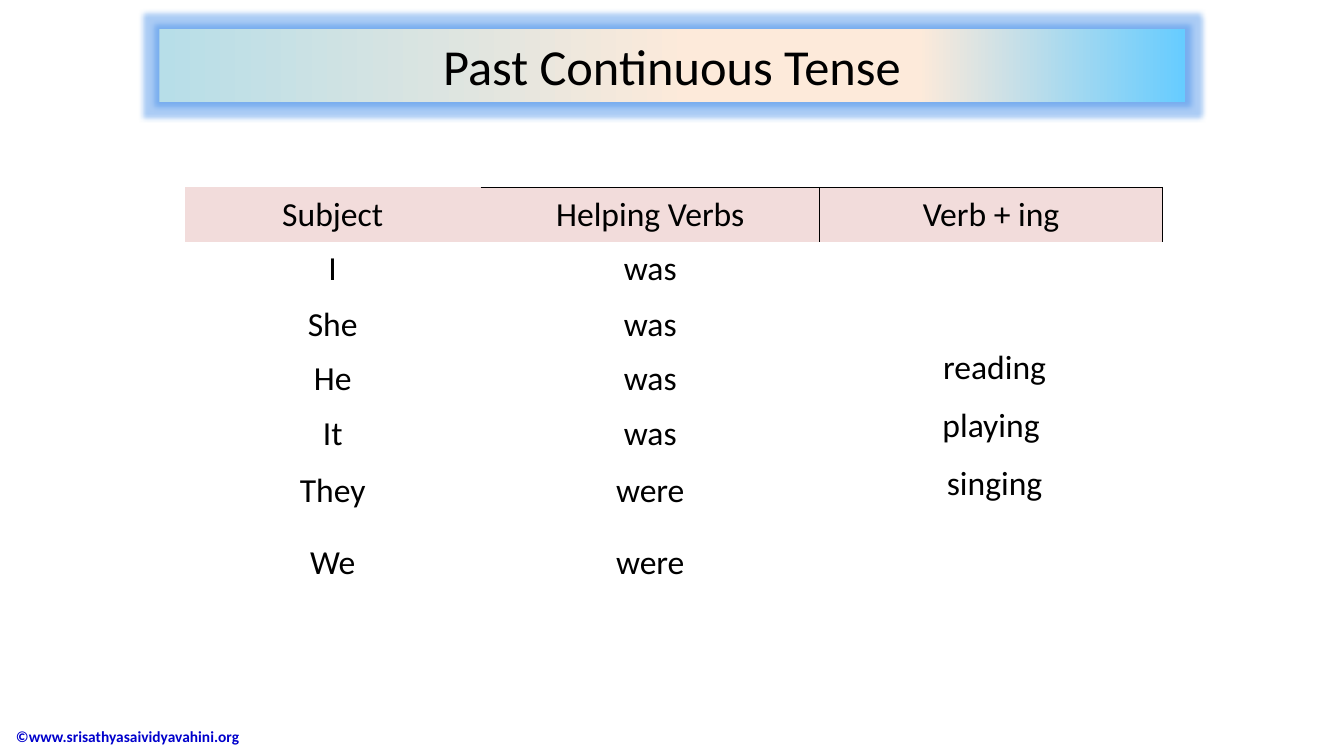
from lxml import etree
from pptx import Presentation
from pptx.dml.color import RGBColor
from pptx.enum.shapes import MSO_SHAPE
from pptx.enum.text import MSO_ANCHOR, PP_ALIGN
from pptx.oxml import parse_xml
from pptx.oxml.ns import nsdecls, qn
from pptx.util import Inches, Pt

RECTANGLE = MSO_SHAPE.RECTANGLE
MIDDLE = MSO_ANCHOR.MIDDLE
CENTER, LEFT = PP_ALIGN.CENTER, PP_ALIGN.LEFT

BLACK = RGBColor(0x00, 0x00, 0x00)
LINK_BLUE = RGBColor(0x00, 0x00, 0xCC)
HEADER_PINK = RGBColor(0xF2, 0xDC, 0xDB)
GLOW_BLUE = RGBColor(0x2E, 0x80, 0xE6)
PALE_TEAL = RGBColor(0xB7, 0xDE, 0xE8)
PEACH = RGBColor(0xFD, 0xEA, 0xDA)
SKY_BLUE = RGBColor(0x66, 0xCC, 0xFF)

NO_GRID_STYLE = "{2D5ABB26-0587-4C30-8999-92F81FD0307C}"
BANNER_STOPS = [(0, PALE_TEAL), (52, PEACH), (74, PEACH), (100, SKY_BLUE)]
COLUMN_WIDTHS = [2.94, 3.36, 3.4]
ROW_HEIGHTS = [0.54, 0.55, 0.54, 0.54, 0.57, 0.71, 0.71]
HEADERS = ["Subject", "Helping Verbs", "Verb + ing"]
HEADER_BORDERS = [[], ["lnR", "lnT"], ["lnL", "lnR", "lnT"]]
SUBJECTS = [("I", "was"), ("She", "was"), ("He", "was"), ("It", "was"),
            ("They", "were"), ("We", "were")]
# Each verb with its left indent in inches
VERBS = [("reading", 0.07), ("playing", 0), ("singing", 0.07)]


class TenseSlide:
    def __init__(self, page, font="Calibri"):
        self.page = page
        self.font = font

    def style(self, para, size, color=BLACK, bold=False, align=CENTER):
        para.alignment = align
        para.font.name = self.font
        para.font.size = Pt(size)
        para.font.bold = bold
        para.font.color.rgb = color

    def banner(self, text, left, top, width, height):
        box = self.page.shapes.add_shape(
            RECTANGLE, Inches(left), Inches(top), Inches(width), Inches(height))
        box.line.fill.background()
        box.fill.background()
        stops = "".join(
            f'<a:gs pos="{position * 1000}"><a:srgbClr val="{color}"/></a:gs>'
            for position, color in BANNER_STOPS)
        properties = box.element.spPr
        properties.replace(properties.find(qn("a:noFill")), parse_xml(
            f'<a:gradFill {nsdecls("a")} rotWithShape="1"><a:gsLst>{stops}</a:gsLst>'
            '<a:lin ang="0" scaled="0"/></a:gradFill>'))
        properties.append(parse_xml(
            f'<a:effectLst {nsdecls("a")}><a:glow rad="{Pt(8)}"><a:srgbClr val="{GLOW_BLUE}">'
            '<a:alpha val="40000"/></a:srgbClr></a:glow></a:effectLst>'))
        box.text_frame.vertical_anchor = MIDDLE
        para = box.text_frame.paragraphs[0]
        para.text = text
        self.style(para, 36)

    def footer(self, text, left, top, width, height):
        box = self.page.shapes.add_textbox(
            Inches(left), Inches(top), Inches(width), Inches(height))
        box.text_frame.word_wrap = True
        box.text_frame.vertical_anchor = MIDDLE
        para = box.text_frame.paragraphs[0]
        para.text = text
        self.style(para, 11, LINK_BLUE, bold=True, align=LEFT)

    def table(self, left, top):
        frame = self.page.shapes.add_table(
            len(ROW_HEIGHTS), len(COLUMN_WIDTHS), Inches(left), Inches(top),
            Inches(sum(COLUMN_WIDTHS)), Inches(sum(ROW_HEIGHTS)))
        grid = frame.table
        grid.first_row = grid.horz_banding = False
        frame.element.find(".//" + qn("a:tableStyleId")).text = NO_GRID_STYLE
        for column, width in zip(grid.columns, COLUMN_WIDTHS):
            column.width = Inches(width)
        for row, height in zip(grid.rows, ROW_HEIGHTS):
            row.height = Inches(height)
        return grid

    def cell(self, cell, lines, fill=None, borders=(), margin_top=0.07):
        cell.margin_left = cell.margin_right = cell.margin_bottom = Inches(0.07)
        cell.margin_top = Inches(margin_top)
        for index, (text, indent) in enumerate(lines):
            frame = cell.text_frame
            para = frame.add_paragraph() if index else frame.paragraphs[0]
            para.text = text
            self.style(para, 24)
            if index:
                para.space_before = Pt(12)
            if indent:
                para._p.get_or_add_pPr().set("marL", str(Inches(indent)))
        properties = cell._tc.get_or_add_tcPr()
        for side in borders:
            line = etree.SubElement(properties, qn("a:" + side), w=str(Pt(1)))
            solid = etree.SubElement(line, qn("a:solidFill"))
            etree.SubElement(solid, qn("a:srgbClr"), val=str(BLACK))
        if fill is None:
            cell.fill.background()
        else:
            cell.fill.solid()
            cell.fill.fore_color.rgb = fill


def main():
    deck = Presentation()
    deck.slide_width, deck.slide_height = Inches(13.33), Inches(7.5)
    slide = TenseSlide(deck.slides.add_slide(deck.slide_layouts[6]))

    # Footer and title
    slide.footer("©www.srisathyasaividyavahini.org", 0.06, 7.1, 3.53, 0.41)
    slide.banner("Past Continuous Tense", 1.58, 0.29, 10.17, 0.72)

    # Table of subjects, helping verbs and verbs
    grid = slide.table(1.83, 1.86)
    for column, (header, borders) in enumerate(zip(HEADERS, HEADER_BORDERS)):
        slide.cell(grid.cell(0, column), [(header, 0)], HEADER_PINK, borders)
    for row, words in enumerate(SUBJECTS, start=1):
        for column, word in enumerate(words):
            slide.cell(grid.cell(row, column), [(word, 0)])
    grid.cell(1, 2).merge(grid.cell(len(SUBJECTS), 2))
    slide.cell(grid.cell(1, 2), VERBS, margin_top=1.05)

    deck.save("out.pptx")


if __name__ == "__main__":
    main()
